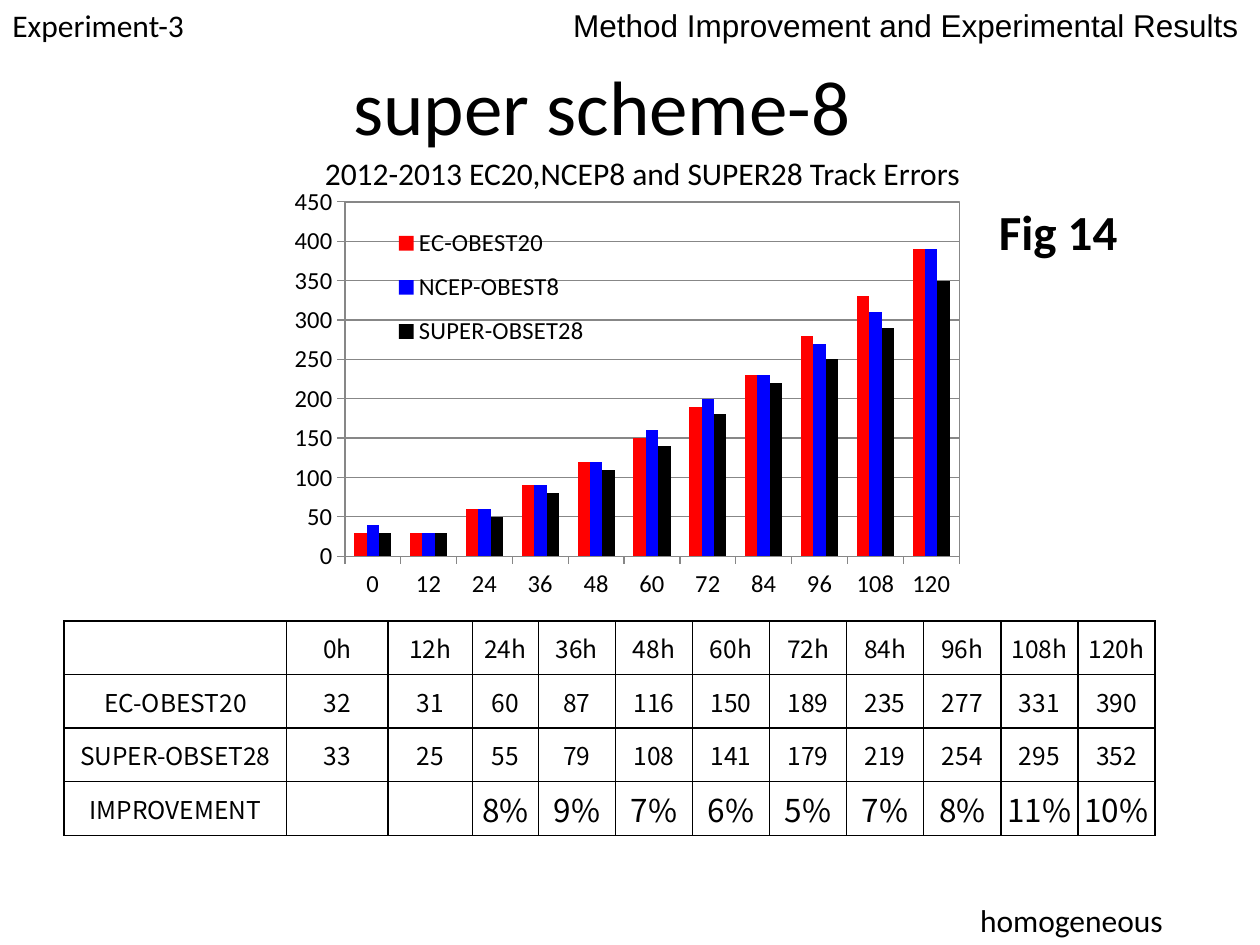
from lxml import etree
from pptx import Presentation
from pptx.chart.data import CategoryChartData
from pptx.dml.color import RGBColor
from pptx.enum.chart import XL_CHART_TYPE, XL_LEGEND_POSITION, XL_TICK_MARK
from pptx.enum.text import MSO_ANCHOR, PP_ALIGN
from pptx.oxml import parse_xml
from pptx.oxml.ns import nsdecls, qn
from pptx.util import Inches, Pt

COLUMNS = XL_CHART_TYPE.COLUMN_CLUSTERED
LEGEND_RIGHT = XL_LEGEND_POSITION.RIGHT
TICK_OUTSIDE = XL_TICK_MARK.OUTSIDE
TOP, MIDDLE = MSO_ANCHOR.TOP, MSO_ANCHOR.MIDDLE
LEFT, CENTER = PP_ALIGN.LEFT, PP_ALIGN.CENTER

COLORS = {"ink": "000000", "grid": "878787", "ec": "FF0000", "ncep": "0000FF", "super": "000000"}
HOURS = range(0, 121, 12)
SERIES = [
    ("EC-OBEST20", [30, 30, 60, 90, 120, 150, 190, 230, 280, 330, 390], "ec"),
    ("NCEP-OBEST8", [40, 30, 60, 90, 120, 160, 200, 230, 270, 310, 390], "ncep"),
    ("SUPER-OBSET28", [30, 30, 50, 80, 110, 140, 180, 220, 250, 290, 350], "super"),
]
TABLE_ROWS = [
    [""] + [f"{hour}h" for hour in HOURS],
    ["EC-OBEST20", 32, 31, 60, 87, 116, 150, 189, 235, 277, 331, 390],
    ["SUPER-OBSET28", 33, 25, 55, 79, 108, 141, 179, 219, 254, 295, 352],
    ["IMPROVEMENT", "", "", "8%", "9%", "7%", "6%", "5%", "7%", "8%", "11%", "10%"],
]
LABELS = [
    ("homogeneous", (7.68, 7.1, 2.13, 0.4), TOP, {}),
    ("2012-2013 EC20,NCEP8 and SUPER28 Track Errors", (2.48, 0.92, 5.47, 0.9), MIDDLE, {}),
    ("Fig 14", (7.83, 1.55, 1.18, 0.57), TOP, {"size": Pt(28), "bold": True}),
    ("Experiment-3", (0, 0, 3.03, 0.4), TOP, {}),
    ("Method Improvement and Experimental Results", (4.45, 0, 5.55, 0.4), TOP, {"name": "Arial"}),
]


def rgb(key):
    return RGBColor.from_string(COLORS[key])


def style_font(font, **values):
    for name, value in ({"name": "Calibri", "size": Pt(18)} | values).items():
        setattr(font, name, value)
    font.color.rgb = rgb("ink")


def write(frame, text, align, **values):
    para = frame.paragraphs[0]
    para.alignment = align
    span = para.add_run()
    span.text = text
    style_font(span.font, **values)


def add_title(page, box):
    title = page.shapes.title
    title.left, title.top, title.width, title.height = map(Inches, box)
    title.text_frame.vertical_anchor = MIDDLE
    write(title.text_frame, "super scheme-8", CENTER, size=Pt(44))


def add_label(page, text, box, anchor, values):
    frame = page.shapes.add_textbox(*map(Inches, box)).text_frame
    frame.word_wrap = True
    frame.vertical_anchor = anchor
    write(frame, text, LEFT, **values)


def set_layout(element, after, x, y, w, h, inner=False):
    for old in element.findall(qn("c:layout")):
        element.remove(old)
    target = '<c:layoutTarget val="inner"/>' if inner else ""
    sizes = "".join(f'<c:{tag} val="{value}"/>' for tag, value in zip("xywh", (x, y, w, h)))
    layout = parse_xml(
        f'<c:layout {nsdecls("c")}><c:manualLayout>{target}'
        f'<c:xMode val="edge"/><c:yMode val="edge"/>{sizes}</c:manualLayout></c:layout>'
    )
    if after is None:
        element.insert(0, layout)
    else:
        element.find(qn(after)).addnext(layout)


def add_error_chart(page, box):
    data = CategoryChartData()
    data.categories = [str(hour) for hour in HOURS]
    for name, values, _ in SERIES:
        data.add_series(name, values)
    chart = page.shapes.add_chart(COLUMNS, *map(Inches, box), data).chart
    style_font(chart.font, size=Pt(14))
    chart.has_title = False
    plot = chart.plots[0]
    plot.gap_width, plot.overlap, plot.vary_by_categories = 150, 0, False
    for series, (_, _, color) in zip(plot.series, SERIES):
        series.format.fill.solid()
        series.format.fill.fore_color.rgb = rgb(color)

    scale = chart.value_axis
    scale.minimum_scale, scale.maximum_scale, scale.major_unit = 0, 450, 50
    scale.has_major_gridlines = True
    for axis in (chart.category_axis, scale):
        axis.major_tick_mark = TICK_OUTSIDE
    for part in (chart.category_axis, scale, scale.major_gridlines):
        part.format.line.color.rgb = rgb("grid")
        part.format.line.width = Pt(0.75)

    chart.has_legend = True
    legend = chart.legend
    legend.position = LEGEND_RIGHT
    legend.include_in_layout = False
    set_layout(legend._element, "c:legendPos", 0.16, 0.07, 0.29, 0.35)
    area = chart._chartSpace.chart.plotArea
    set_layout(area, None, 0.1, 0.04, 0.86, 0.85, inner=True)
    frame = parse_xml(
        f'<c:spPr {nsdecls("c", "a")}><a:noFill/><a:ln w="9525"><a:solidFill>'
        f'<a:srgbClr val="{COLORS["grid"]}"/></a:solidFill></a:ln></c:spPr>'
    )
    area.append(frame)


def add_borders(cell):
    properties = cell._tc.get_or_add_tcPr()
    for side in ("a:lnL", "a:lnR", "a:lnT", "a:lnB"):
        line = etree.SubElement(properties, qn(side), w=str(Pt(1)))
        fill = etree.SubElement(line, qn("a:solidFill"))
        etree.SubElement(fill, qn("a:srgbClr"), val=COLORS["ink"])


def add_error_table(page, box):
    widths = [1.76, 0.8, 0.67, 0.52] + [0.61] * 8
    shape = page.shapes.add_table(len(TABLE_ROWS), len(widths), *map(Inches, box))
    table = shape.table
    table.first_row = table.horz_banding = False
    for column, width in zip(table.columns, widths):
        column.width = Inches(width * box[2] / sum(widths))
    for row, values in zip(table.rows, TABLE_ROWS):
        row.height = Inches(box[3] / len(TABLE_ROWS))
        for cell, value in zip(row.cells, values):
            add_borders(cell)
            cell.fill.background()
            cell.vertical_anchor = MIDDLE
            for side in ("left", "right", "top", "bottom"):
                setattr(cell, f"margin_{side}", 0)
            if value != "":
                text = str(value)
                size = Pt(18) if text.endswith("%") else Pt(14)
                write(cell.text_frame, text, CENTER, name="Noto Sans CJK SC", size=size)


def main():
    deck = Presentation()
    deck.slide_width, deck.slide_height = Inches(10), Inches(7.5)
    page = deck.slides.add_slide(deck.slide_layouts[5])
    add_title(page, (0.28, 0.21, 9, 1.25))
    add_error_chart(page, (2.17, 1.47, 5.67, 3.31))
    add_error_table(page, (0.51, 4.93, 8.66, 1.7))
    for label in LABELS:
        add_label(page, *label)
    deck.save("out.pptx")


if __name__ == "__main__":
    main()
